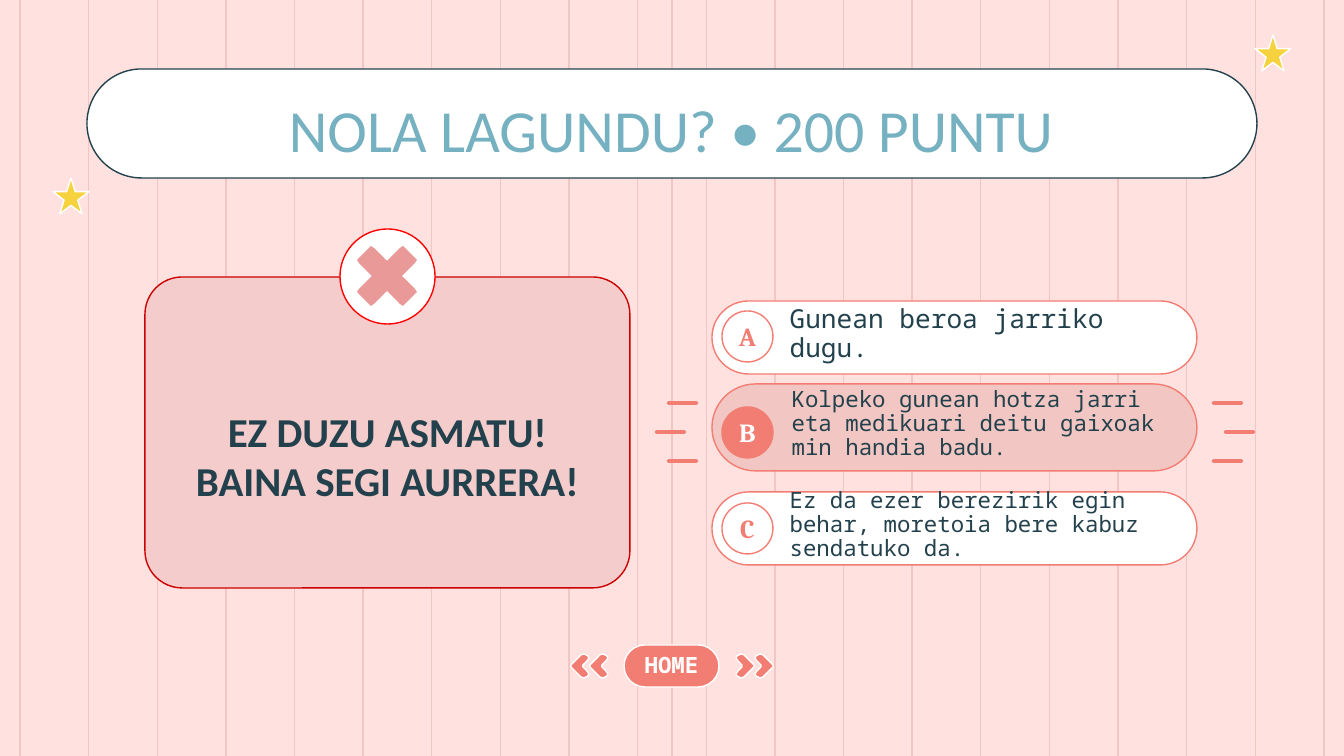
from pptx import Presentation
from pptx import util as u
from pptx.dml.color import RGBColor
from pptx.enum import shapes, text
from pptx.oxml.ns import qn
from lxml import etree

WIDTH, HEIGHT = 1344, 756
SCALE = u.Inches(10) / WIDTH

BLUSH = RGBColor(0xFF, 0xE1, 0xDF)
ROSE = RGBColor(0xF2, 0xC6, 0xC2)
CORAL = RGBColor(0xF2, 0x7D, 0x72)
PINK = RGBColor(0xF4, 0xCC, 0xCC)
SALMON = RGBColor(0xEA, 0x99, 0x99)
CRIMSON = RGBColor(0xCC, 0x00, 0x00)
RED = RGBColor(0xFF, 0x00, 0x00)
NAVY = RGBColor(0x23, 0x41, 0x4C)
SKY = RGBColor(0x76, 0xB1, 0xC1)
GOLD = RGBColor(0xF7, 0xD2, 0x3F)
WHITE = RGBColor(0xFF, 0xFF, 0xFF)

BODY, SERIF, MONO = "Calibri", "Cambria", "Noto Sans Mono"
CENTER, LEFT = text.PP_ALIGN.CENTER, text.PP_ALIGN.LEFT
MIDDLE, TOP = text.MSO_ANCHOR.MIDDLE, text.MSO_ANCHOR.TOP
PILL = shapes.MSO_SHAPE.ROUNDED_RECTANGLE
CIRCLE = shapes.MSO_SHAPE.OVAL
STAR = shapes.MSO_SHAPE.STAR_5_POINT


def px(value):
    return u.Emu(round(value * SCALE))


def write(box, words, font=BODY, size=12, color=NAVY, bold=False, align=CENTER,
          anchor=MIDDLE, insets=(13, 13, 13, 13), spacing=1.0):
    frame = box.text_frame
    frame.word_wrap = True
    frame.vertical_anchor = anchor
    (frame.margin_left, frame.margin_top,
     frame.margin_right, frame.margin_bottom) = map(px, insets)
    para = frame.paragraphs[0]
    para.alignment = align
    para.line_spacing = spacing
    span = para.add_run()
    span.text = words
    span.font.name = font
    span.font.size = u.Pt(size)
    span.font.bold = bold
    span.font.color.rgb = color


class Board:
    def __init__(self, page, line_width=0.75):
        self.page = page
        self.line_width = u.Pt(line_width)

    def paint(self, shape, fill, line):
        shape.shadow.inherit = False
        shape.fill.solid()
        shape.fill.fore_color.rgb = fill
        if line is None:
            shape.line.fill.background()
        else:
            shape.line.color.rgb = line
            shape.line.width = self.line_width
        return shape

    def shape(self, kind, left, top, width, height, fill, line, corner=0.5):
        shape = self.page.shapes.add_shape(
            kind, px(left), px(top), px(width), px(height))
        if kind == PILL:
            shape.adjustments[0] = corner
        return self.paint(shape, fill, line)

    def label(self, left, top, width, height):
        return self.page.shapes.add_textbox(
            px(left), px(top), px(width), px(height))

    def outline(self, points, fill, line=None):
        builder = self.page.shapes.build_freeform(*points[0], scale=SCALE)
        builder.add_line_segments(points[1:], close=True)
        return self.paint(builder.convert_to_shape(), fill, line)

    def line(self, x1, y1, x2, y2, color, width=None, cap="flat"):
        line = self.page.shapes.add_connector(
            shapes.MSO_CONNECTOR.STRAIGHT, px(x1), px(y1), px(x2), px(y2))
        line.line.color.rgb = color
        line.line.width = u.Pt(width) if width else self.line_width
        line.line._get_or_add_ln().set("cap", cap)
        etree.SubElement(line._element.spPr, qn("a:effectLst"))

    def option(self, letter, words, top, height, badge_top, size, chosen=False):
        box = self.shape(PILL, 712, top, 485, height, ROSE if chosen else WHITE, CORAL)
        write(box, words, font=MONO, size=size, align=LEFT,
              insets=(67, 7, 13, 13), spacing=0.9)
        badge = self.shape(CIRCLE, 722, badge_top, 51, 51,
                           CORAL if chosen else WHITE, CORAL)
        write(badge, letter, font=SERIF, size=14, bold=True,
              color=WHITE if chosen else CORAL, insets=(0, 13, 0, 13))


def draw_background(board):
    fill = board.page.background.fill
    fill.solid()
    fill.fore_color.rgb = BLUSH
    stripes = 20
    for x in [WIDTH / 2] + [20 + i * 1304 / (stripes - 1) for i in range(stripes)]:
        board.line(x, 0, x, HEIGHT, ROSE)


def draw_title(board):
    board.shape(PILL, 87, 69, 1170, 109, WHITE, NAVY)
    for left, top in ((53, 178), (1255, 35)):
        board.shape(STAR, left, top, 36, 36, GOLD, WHITE)
    title = board.label(176, 75, 991, 87)
    write(title, "NOLA LAGUNDU? • 200 PUNTU", size=32, color=SKY,
          anchor=TOP, insets=(13, 18, 13, 13))


def draw_verdict(board):
    card = board.shape(PILL, 145, 277, 485, 311, PINK, CRIMSON, corner=0.12)
    write(card, "EZ DUZU ASMATU! BAINA SEGI AURRERA!", size=22, bold=True,
          insets=(40, 60, 40, 13))
    board.shape(CIRCLE, 340, 229, 95, 95, WHITE, RED)


def draw_cross(board, x, y):
    arm = [(0, -15), (13, -28), (16, -30), (18, -28), (28, -18), (30, -16), (28, -13)]
    points = []
    for _ in range(4):
        points += [(x + dx, y + dy) for dx, dy in arm]
        arm = [(-dy, dx) for dx, dy in arm]
    board.outline(points, SALMON)


def draw_options(board):
    board.option("A", "Gunean beroa jarriko dugu.", 301, 73, 311, 14)
    board.option("C", "Ez da ezer berezirik egin behar, moretoia bere kabuz sendatuko da.",
                 492, 73, 503, 12)
    board.option("B", "Kolpeko gunean hotza jarri eta medikuari deitu gaixoak min handia badu.",
                 384, 87, 407, 12, chosen=True)
    axis = 955
    for near, y in ((271, 432), (259, 403), (259, 461)):
        for side in (1, -1):
            board.line(axis + side * (near + 27), y, axis + side * near, y,
                       CORAL, width=2.25, cap="rnd")


def draw_home(board):
    button = board.shape(PILL, 624, 645, 95, 42, CORAL, WHITE)
    write(button, "HOME", font=MONO, bold=True, color=WHITE, insets=(13, 11, 13, 13))
    chevron = [(5, 0), (1, 2), (0, 4), (2, 7), (6, 11), (6, 13), (2, 17), (0, 20),
               (1, 22), (5, 24), (8, 23), (18, 13), (18, 11), (8, 1)]
    for side in (1, -1):
        for offset in (64, 83):
            board.outline([(WIDTH // 2 + side * (offset + x), 654 + y)
                           for x, y in chevron], CORAL, WHITE)


def main():
    deck = Presentation()
    deck.slide_width, deck.slide_height = px(WIDTH), px(HEIGHT)
    board = Board(deck.slides.add_slide(deck.slide_layouts[6]))
    draw_background(board)
    draw_title(board)
    draw_verdict(board)
    draw_options(board)
    draw_cross(board, 387, 276)
    draw_home(board)
    deck.save("out.pptx")


if __name__ == "__main__":
    main()
